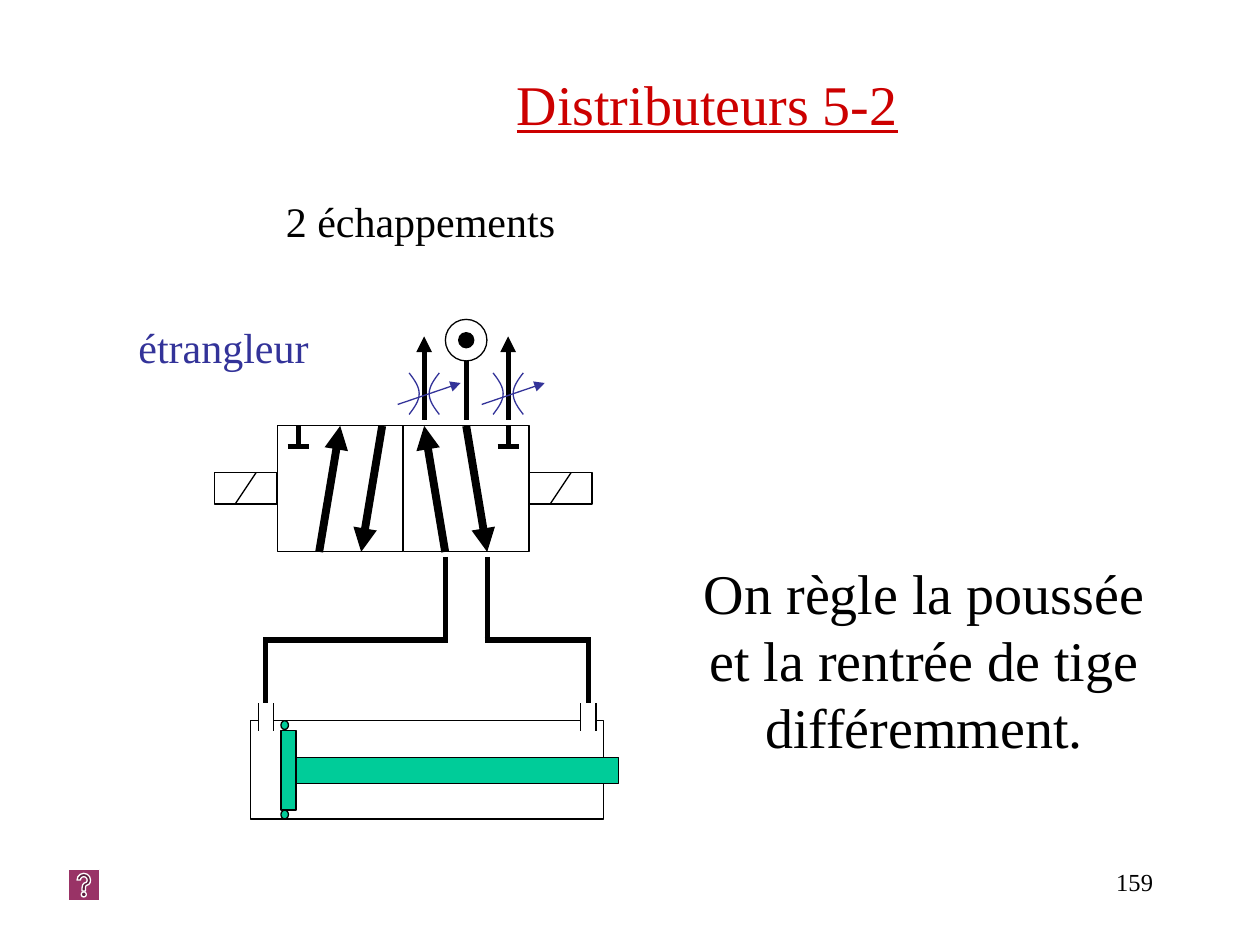
from math import pi, sin

from lxml import etree
from pptx import Presentation
from pptx.dml.color import RGBColor
from pptx.enum.shapes import MSO_CONNECTOR, MSO_SHAPE
from pptx.enum.text import MSO_ANCHOR, MSO_AUTO_SIZE, PP_ALIGN
from pptx.oxml.ns import qn
from pptx.util import Inches, Pt

RECTANGLE, OVAL = MSO_SHAPE.RECTANGLE, MSO_SHAPE.OVAL
HELP_BUTTON = MSO_SHAPE.ACTION_BUTTON_HELP
STRAIGHT = MSO_CONNECTOR.STRAIGHT
LEFT, CENTER, RIGHT = PP_ALIGN.LEFT, PP_ALIGN.CENTER, PP_ALIGN.RIGHT
TOP, NO_AUTOFIT = MSO_ANCHOR.TOP, MSO_AUTO_SIZE.NONE

FONT = "Times New Roman"
BLACK, WHITE, RED, BLUE = "000000", "FFFFFF", "CC0000", "333399"
GREEN, PURPLE = "00CC99", "993366"
VALVE_LEFT, VALVE_TOP, STEP = 2.2, 3.38, 1 / 6
CYLINDER_TOP, ROD_AXIS = 5.72, 6.11


def color(value):
    """Turn a hex string into a colour."""
    return RGBColor.from_string(value)


def column(number):
    """Return the x of a valve grid column."""
    return VALVE_LEFT + number * STEP


def row(number):
    """Return the y of a valve grid row."""
    return VALVE_TOP + number * STEP


def write(shape, text, size=24, ink=BLACK, align=LEFT, underline=False, indent=0):
    """Put formatted text into a text box or placeholder."""
    frame = shape.text_frame
    frame.word_wrap = True
    frame.auto_size = NO_AUTOFIT
    frame.vertical_anchor = TOP
    paragraph = frame.paragraphs[0]
    paragraph.alignment = align
    paragraph.space_before = Pt(0)
    properties = paragraph._p.get_or_add_pPr()
    properties.set("marL", str(Inches(indent)))
    properties.set("indent", "0")
    etree.SubElement(properties, qn("a:buNone"))
    run = paragraph.add_run()
    run.text = text
    run.font.name, run.font.size = FONT, Pt(size)
    run.font.underline = underline
    run.font.color.rgb = color(ink)


def place(shape, left, top, width, height):
    """Move and size a placeholder."""
    shape.left, shape.top = Inches(left), Inches(top)
    shape.width, shape.height = Inches(width), Inches(height)


def add_label(slide, text, left, top, width, **style):
    """Add a one-line text box."""
    box = [Inches(length) for length in (left, top, width, 0.5)]
    write(slide.shapes.add_textbox(*box), text, **style)


def add_figure(slide, kind, left, top, width, height, fill=WHITE, line=BLACK):
    """Add a filled and outlined preset shape."""
    box = [Inches(length) for length in (left, top, width, height)]
    shape = slide.shapes.add_shape(kind, *box)
    shape.shadow.inherit = False
    shape.fill.solid()
    shape.fill.fore_color.rgb = color(fill)
    shape.line.color.rgb = color(line)
    shape.line.width = Pt(0.75)


def add_line(slide, start, end, width=3, ink=BLACK, arrow=False):
    """Add a straight line, with an optional arrowhead at its end."""
    ends = [Inches(length) for length in (*start, *end)]
    connector = slide.shapes.add_connector(STRAIGHT, *ends)
    connector.line.color.rgb = color(ink)
    connector.line.width = Pt(width)
    if arrow:
        outline = connector.line._get_or_add_ln()
        etree.SubElement(outline, qn("a:tailEnd"), type="triangle")
    etree.SubElement(connector._element.spPr, qn("a:effectLst"))


def add_throttle_side(slide, center, side):
    """Add one curved side of a throttle."""
    points = [
        (Inches(center + side * (0.12 - 0.08 * sin(pi * part / 16))),
         Inches(2.96 + 0.33 * part / 16))
        for part in range(17)
    ]
    builder = slide.shapes.build_freeform(*points[0])
    builder.add_line_segments(points[1:], close=False)
    shape = builder.convert_to_shape()
    shape.shadow.inherit = False
    shape.fill.background()
    shape.line.color.rgb = color(BLUE)
    shape.line.width = Pt(0.75)


def add_exhaust(slide, center):
    """Add an exhaust arrow with its adjustable throttle."""
    add_line(slide, (center, 3.33), (center, 2.67), arrow=True)
    for side in (-1, 1):
        add_throttle_side(slide, center, side)
    add_line(slide, (center - 0.21, 3.21), (center + 0.29, 3.04),
             width=0.75, ink=BLUE, arrow=True)


def add_valve(slide):
    """Add the two valve positions with solenoids, paths and blocked ports."""
    for left in (0, 6):
        add_figure(slide, RECTANGLE, column(left), row(0), 1, 1)
    for left in (-3, 12):
        add_figure(slide, RECTANGLE, column(left), 3.75, 0.5, 0.25)
        add_line(slide, (column(left + 2), 3.75), (column(left + 1), 4), width=0.75)
    for start, end, direction in ((5, 4, 1), (3, 2, -1), (8, 7, -1), (9, 10, 1)):
        rows = (0, 6)[::direction]
        if direction < 0 and start == 3:
            start, end = 2, 3
        add_line(slide, (column(start), row(rows[0])), (column(end), row(rows[1])),
                 width=4.5, arrow=True)
    for port in (1, 11):
        add_line(slide, (column(port), row(0)), (column(port), row(1)))
        add_line(slide, (column(port - 0.5), row(1)), (column(port + 0.5), row(1)))


def add_cylinder(slide):
    """Add the cylinder with its ports, piston, seals and rod."""
    add_figure(slide, RECTANGLE, 1.99, CYLINDER_TOP, 2.8, 0.78)
    for port in (2.11, 4.67):
        walls = (port - 0.06, port + 0.06)
        add_line(slide, (walls[0], CYLINDER_TOP), (walls[1], CYLINDER_TOP),
                 width=1, ink=WHITE)
        for wall in walls:
            add_line(slide, (wall, 5.58), (wall, 5.8), width=0.75)
    add_figure(slide, RECTANGLE, 2.23, 5.8, 0.12, 0.63, fill=GREEN)
    for top in (CYLINDER_TOP, 6.43):
        add_figure(slide, OVAL, 2.23, top, 0.06, 0.07, fill=GREEN)
    add_figure(slide, RECTANGLE, 2.35, ROD_AXIS - 0.1, 2.56, 0.21, fill=GREEN)


def add_pipes(slide):
    """Connect the valve outlets to the cylinder ports."""
    for outlet, port in ((column(8), 2.11), (column(10), 4.67)):
        reach = 0.02 if port > outlet else -0.02
        add_line(slide, (outlet, 4.42), (outlet, 5.08))
        add_line(slide, (outlet - reach, 5.08), (port + reach, 5.08))
        add_line(slide, (port, 5.08), (port, 5.58))


def add_supply(slide):
    """Add the pressure source and its line."""
    center = column(9)
    add_line(slide, (center, 3.33), (center, 2.67))
    for size, fill in ((0.33, WHITE), (0.12, BLACK)):
        add_figure(slide, OVAL, center - size / 2, 2.7 - size / 2, size, size, fill=fill)


def main():
    """Build and save the slide."""
    presentation = Presentation()
    presentation.slide_width, presentation.slide_height = Inches(10), Inches(7.5)
    slide = presentation.slides.add_slide(presentation.slide_layouts[1])
    title, body = slide.placeholders
    place(title, 1, 0.5, 8.25, 0.63)
    write(title, "Distributeurs 5-2", size=32, ink=RED, underline=True, indent=3)
    place(body, 5.42, 4.38, 3.83, 1.7)
    write(body, "On règle la poussée et la rentrée de tige différemment.",
          size=32, align=CENTER)
    add_label(slide, "159", 7.17, 6.83, 2.08, size=14, align=RIGHT)
    add_label(slide, "2 échappements", 2.17, 1.5, 2.45)
    add_label(slide, "étrangleur", 1, 2.5, 1.92, ink=BLUE)
    add_valve(slide)
    add_pipes(slide)
    add_cylinder(slide)
    add_supply(slide)
    for port in (7, 11):
        add_exhaust(slide, column(port))
    add_figure(slide, HELP_BUTTON, 0.54, 6.9, 0.25, 0.25, fill=PURPLE, line=WHITE)
    presentation.save("out.pptx")


if __name__ == "__main__":
    main()
